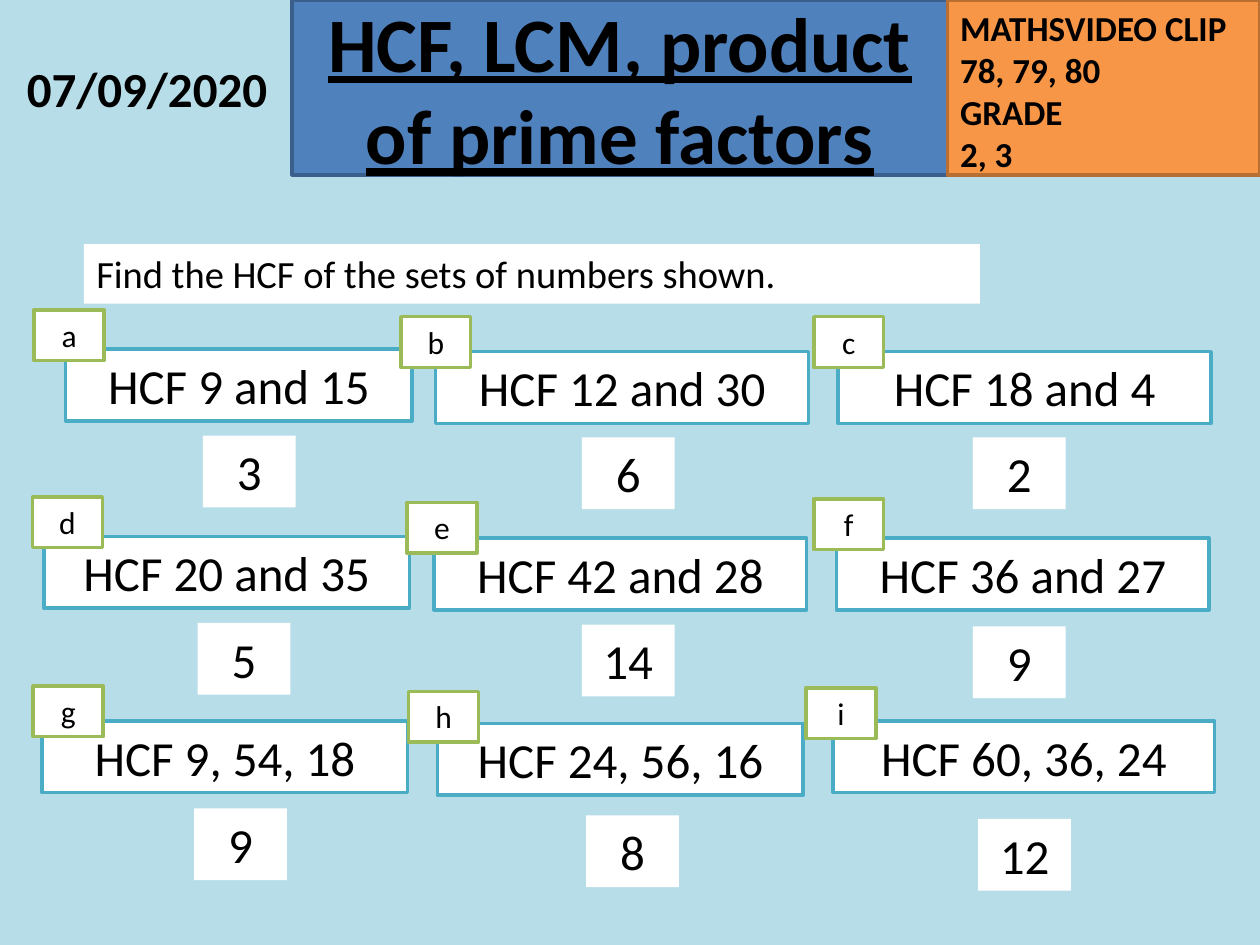
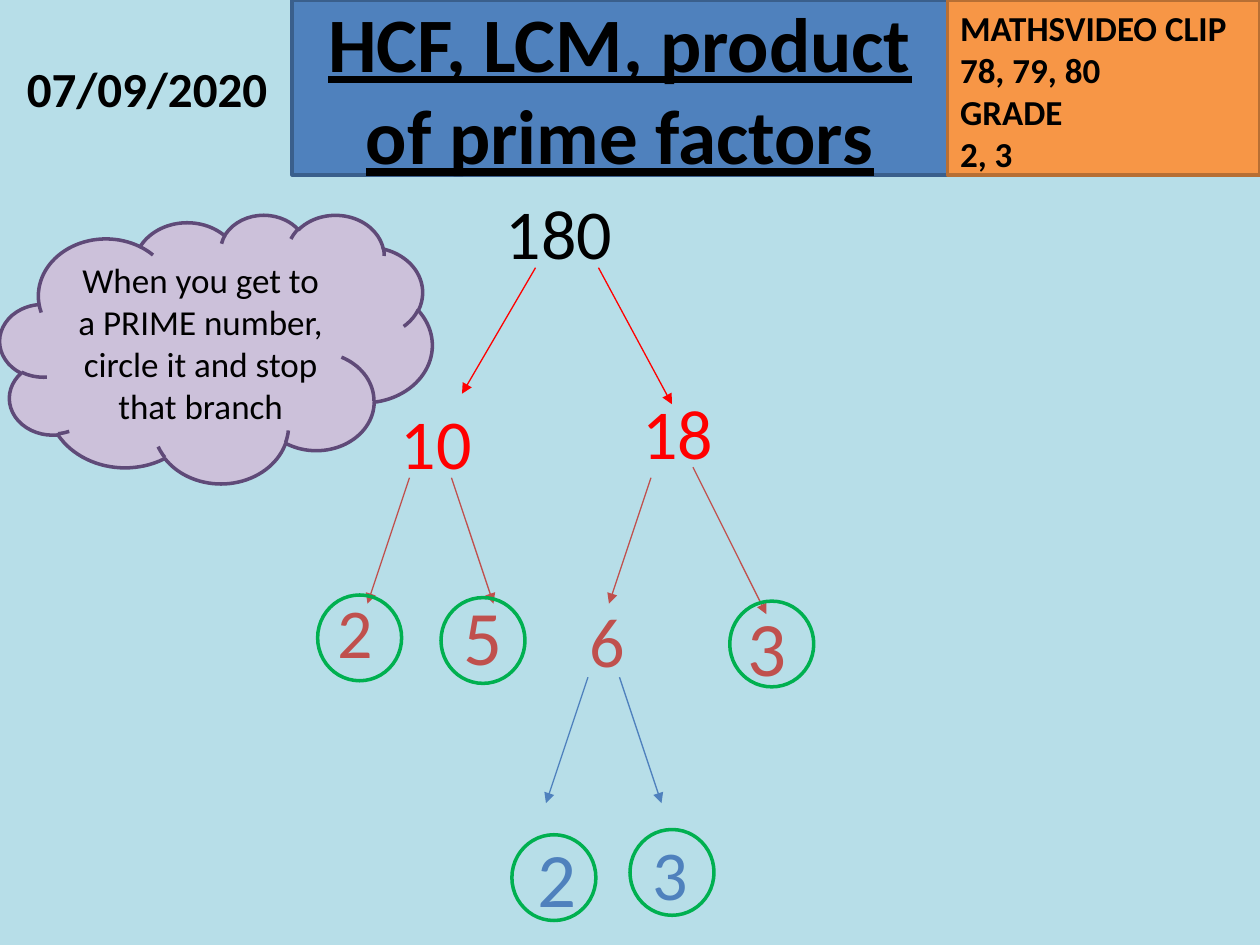
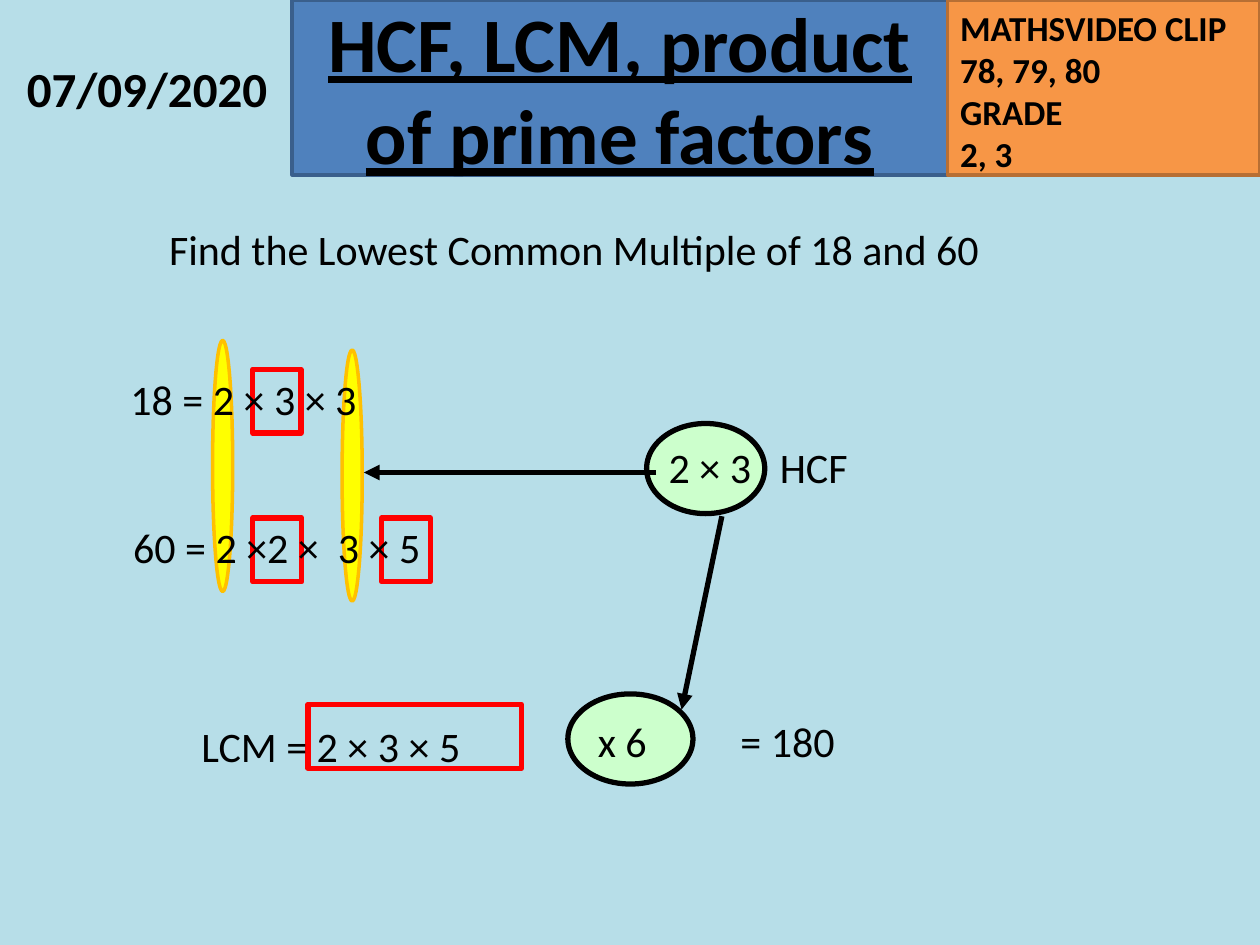
"""Build three maths slides on HCF, LCM and prime factors."""
from lxml import etree
from pptx import Presentation
from pptx.dml.color import RGBColor
from pptx.enum import shapes, text
from pptx.oxml import ns
from pptx.util import Pt

BLACK, WHITE, RED = "000000", "FFFFFF", "FF0000"
SKY, BLUE, NAVY = "B7DEE8", "4F81BD", "3A5F8C"
ORANGE, RUST, BRICK = "F79646", "B76F34", "C0504D"
TEAL, LIME, GREEN = "4BACC6", "9BBB59", "00B050"
LILAC, PLUM, MINT = "CCC1DA", "5F4A78", "CCFFCC"
YELLOW, GOLD = "FFFF00", "FFC000"
FONT = "Calibri"
RECT = shapes.MSO_SHAPE.RECTANGLE
OVAL = shapes.MSO_SHAPE.OVAL
CLOUD = shapes.MSO_SHAPE.CLOUD
LEFT, MID = text.PP_ALIGN.LEFT, text.PP_ALIGN.CENTER
TOP, HALF = text.MSO_ANCHOR.TOP, text.MSO_ANCHOR.MIDDLE


def draw(slide, kind, place, words="", size=24, color=BLACK, fill=None, edge=None,
         thick=2, align=MID, anchor=TOP, bold=False, under=False):
    area = [Pt(n) for n in place]
    if kind is None:
        item = slide.shapes.add_textbox(*area)
    else:
        item = slide.shapes.add_shape(kind, *area)
        item.shadow.inherit = False
    if fill:
        item.fill.solid()
        item.fill.fore_color.rgb = RGBColor.from_string(fill)
    else:
        item.fill.background()
    if edge:
        item.line.color.rgb = RGBColor.from_string(edge)
        item.line.width = Pt(thick)
    else:
        item.line.fill.background()
    if words:
        frame = item.text_frame
        frame.word_wrap = True
        frame.vertical_anchor = anchor
        frame.text = words
        for par in frame.paragraphs:
            par.alignment = align
            par.font.name = FONT
            par.font.size = Pt(size)
            par.font.bold = bold
            par.font.underline = under
            par.font.color.rgb = RGBColor.from_string(color)


def arrow(slide, ends, color, thick):
    link = slide.shapes.add_connector(
        shapes.MSO_CONNECTOR.STRAIGHT, *[Pt(n) for n in ends])
    link.line.color.rgb = RGBColor.from_string(color)
    link.line.width = Pt(thick)
    etree.SubElement(link.line._get_or_add_ln(), ns.qn("a:tailEnd"), type="triangle")
    etree.SubElement(link._element.spPr, ns.qn("a:effectLst"))


deck = Presentation()
deck.slide_width, deck.slide_height = Pt(720), Pt(540)
back = deck.slide_master.background.fill
back.solid()
back.fore_color.rgb = RGBColor.from_string(SKY)

pages = [deck.slides.add_slide(deck.slide_layouts[6]) for _ in range(3)]
for page in pages:
    draw(page, RECT, (167, 0, 374.5, 100), "HCF, LCM, product of prime factors", 44,
         fill=BLUE, edge=NAVY, anchor=HALF, bold=True, under=True)
    draw(page, RECT, (541.5, 0, 178.5, 100),
         "MATHSVIDEO CLIP\n78, 79, 80\nGRADE\n2, 3", 20,
         fill=ORANGE, edge=RUST, align=LEFT, bold=True)
    draw(page, RECT, (0, 0, 168, 100), "07/09/2020", 28, anchor=HALF, bold=True)
quiz, tree, common = pages

draw(quiz, RECT, (48, 139.5, 512, 34), "Find the HCF of the sets of numbers shown.", 22,
     fill=WHITE, align=LEFT)
tasks = [
    ("9 and 15", (37.5, 199.5, 198), "3", (116, 249), (19.5, 177)),
    ("12 and 30", (249, 201, 213), "6", (332.5, 250), (229, 181)),
    ("18 and 4", (479, 201, 213), "2", (556, 250), (465, 181)),
    ("20 and 35", (25, 306.5, 209), "5", (113, 356), (18.5, 284)),
    ("42 and 28", (248, 307.5, 213), "14", (332.5, 357), (232.5, 287)),
    ("36 and 27", (478, 307.5, 213), "9", (556, 358), (465, 285)),
    ("9, 54, 18", (24, 412, 209), "9", (111, 462), (19, 392)),
    ("24, 56, 16", (250, 413.5, 209), "8", (335, 466), (233.5, 395)),
    ("60, 36, 24", (476, 412, 218), "12", (559, 468), (460.5, 393)),
]
for letter, (sums, ask, answer, reply, tag) in zip("abcdefghi", tasks):
    draw(quiz, RECT, (*ask, 41), f"HCF {sums}", 28, fill=WHITE, edge=TEAL)
    draw(quiz, RECT, (*reply, 53, 41), answer, 28, fill=WHITE)
    draw(quiz, RECT, (*tag, 40, 29), letter, 18, fill=WHITE, edge=LIME)

nodes = [
    ("180", 282, 105, 40, BLACK),
    ("10", 222, 225, 40, RED),
    ("18", 360, 219, 40, RED),
    ("2", 186, 333, 40, BRICK),
    ("5", 258, 333, 44, BRICK),
    ("6", 330, 338, 40, BRICK),
    ("3", 420, 339, 44, BRICK),
    ("2", 300, 471, 44, BLUE),
    ("3", 366, 471, 40, BLUE),
]
for digits, left, top, size, color in nodes:
    draw(tree, None, (left, top, 36 * len(digits), 1.4 * size), digits, size, color,
         align=LEFT)
stems = [
    (306, 153, 264, 225, RED),
    (342, 153, 384, 231, RED),
    (234, 273, 210, 345, BRICK),
    (258, 273, 282, 345, BRICK),
    (372, 273, 348, 345, BRICK),
    (396, 267, 438, 351, BRICK),
    (336, 387, 312, 459, BLUE),
    (354, 387, 378, 459, BLUE),
]
for *ends, color in stems:
    arrow(tree, ends, color, 0.75)
draw(tree, CLOUD, (0, 122.5, 247, 153.5),
     "When you get to a PRIME number, circle it and stop that branch", 20,
     fill=LILAC, edge=PLUM, anchor=HALF)
for left, top in [(181.5, 340), (252, 341.5), (417, 343.5), (292.5, 477), (360, 474)]:
    draw(tree, OVAL, (left, top, 48, 49), edge=GREEN)

for left, top in [(121.5, 194.5), (195.5, 200)]:
    draw(common, OVAL, (left, top, 11.5, 143.5), fill=YELLOW, edge=GOLD)
for spot in [(144.5, 211, 27.5, 36.5), (144.5, 296, 28, 36.5),
             (218, 296, 28, 36.5), (176, 402.5, 122, 36.5)]:
    draw(common, RECT, spot, edge=RED, thick=3)
for spot in [(324.5, 396.5, 71.5, 51.5), (369.5, 242, 67.5, 51.5)]:
    draw(common, OVAL, spot, fill=MINT, edge=BLACK, thick=3)
lines = [
    ("Find the Lowest Common Multiple of 18 and 60", 89.5, 124, 630),
    ("18 = 2 × 3 × 3", 67.5, 210, 260),
    ("60 = 2 ×2 ×  3 × 5", 69, 294.5, 260),
    ("LCM = 2 × 3 × 5", 108, 408, 230),
    ("2 × 3", 375, 248.5, 65),
    ("HCF", 438.5, 248.5, 120),
    ("x 6", 334.5, 405.5, 60),
    ("= 180", 416, 405.5, 142),
]
for words, left, top, width in lines:
    draw(common, None, (left, top, width, 36), words, align=LEFT)
for ends in [(375, 270, 208, 270), (412.5, 295, 389.5, 405.5)]:
    arrow(common, ends, BLACK, 3)

deck.save("out.pptx")
